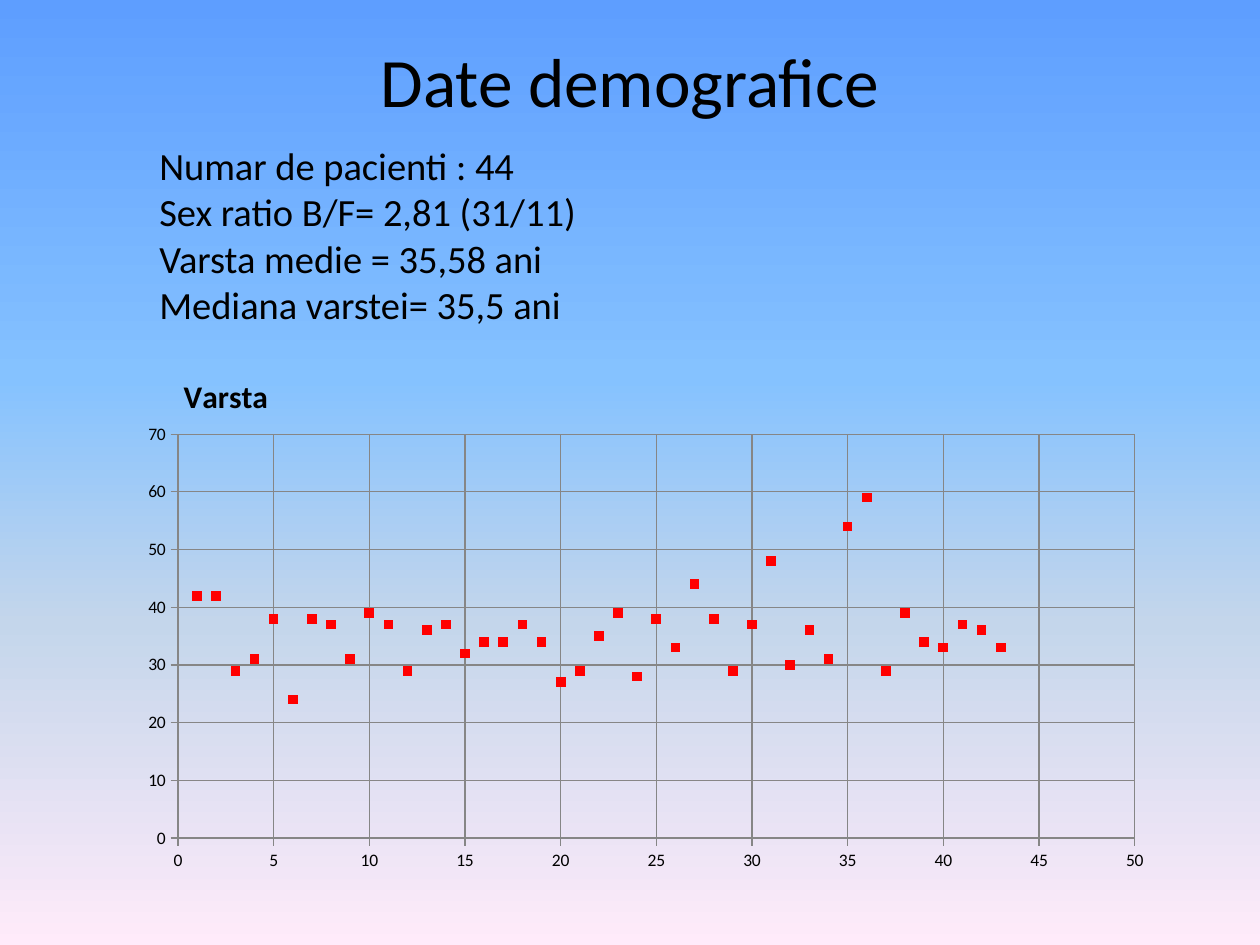
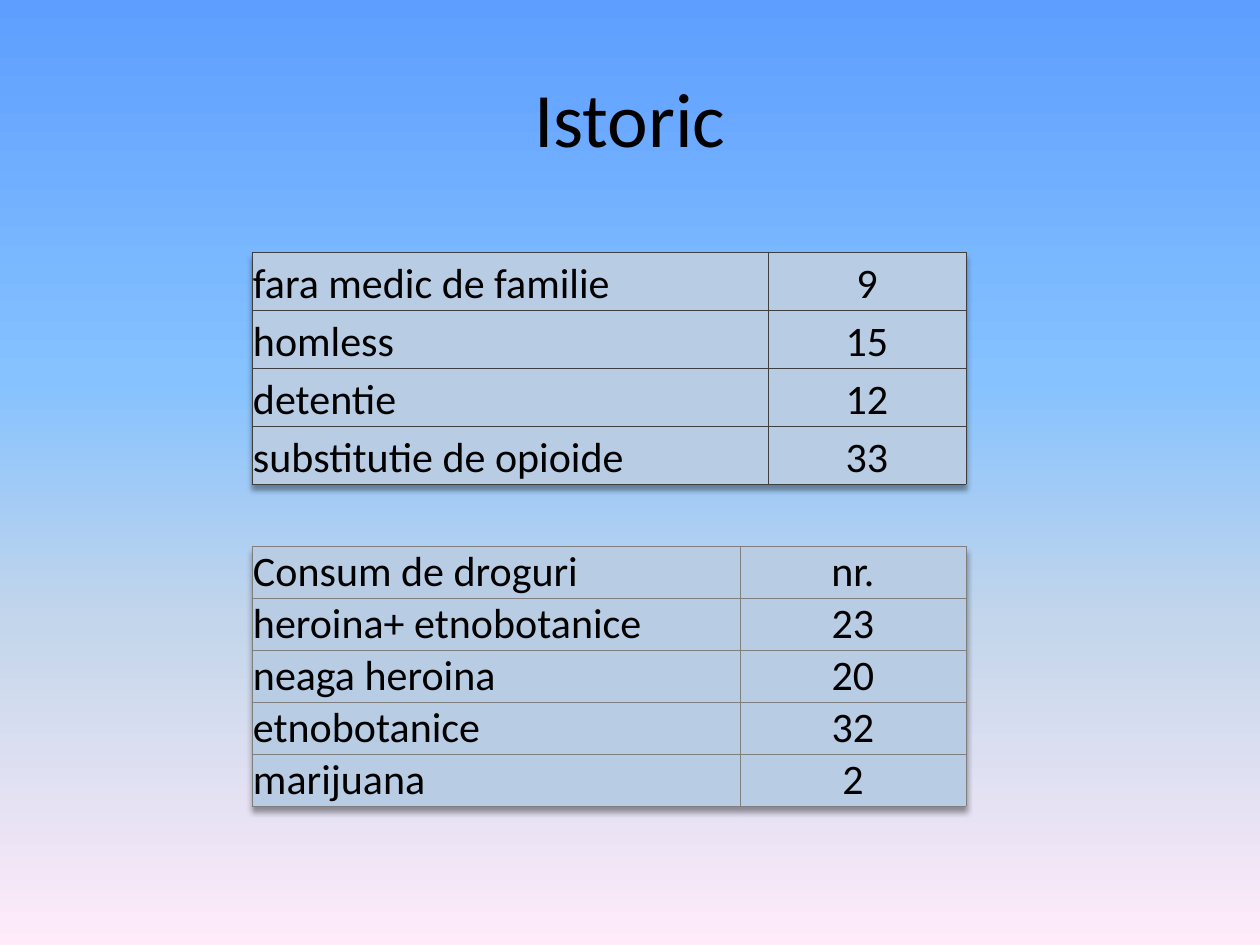
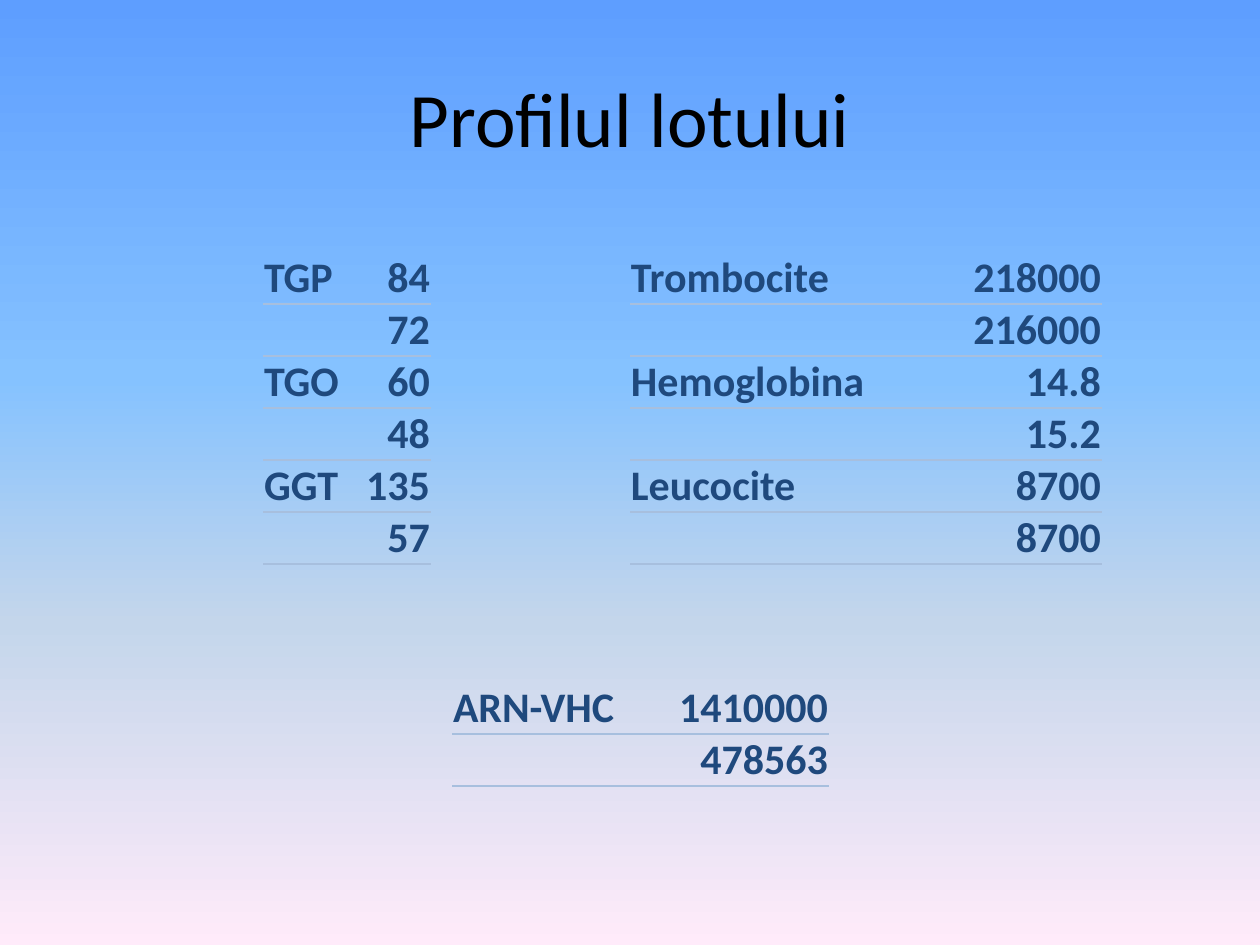
from lxml.etree import SubElement
from pptx import Presentation
from pptx.chart.data import XyChartData
from pptx.dml.color import RGBColor
from pptx.enum.chart import XL_CHART_TYPE, XL_MARKER_STYLE, XL_TICK_MARK
from pptx.enum.text import MSO_ANCHOR, PP_ALIGN
from pptx.oxml import parse_xml
from pptx.oxml.ns import nsdecls, qn
from pptx.util import Emu, Pt

FONT = "Calibri"
BLACK, RED, GRID, CELL_BLUE = "000000", "FF0000", "868686", "B8CCE4"
DARK_BLUE, LINE_BLUE = "1F497D", "A7BFDE"
BACKGROUND_STOPS = [(0, "5E9EFF"), (40, "85C2FF"), (66, "C4D6EB"), (100, "FFEBFA")]
NO_TABLE_STYLE = "{2D5ABB26-0587-4C30-8999-92F81FD0307C}"

DEMOGRAPHICS = [
    "Numar de pacienti : 44",
    "Sex ratio B/F= 2,81 (31/11)",
    "Varsta medie = 35,58 ani",
    "Mediana varstei= 35,5 ani",
]
AGES = [
    42, 42, 29, 31, 38, 24, 38, 37, 31, 39, 37, 29, 36, 37, 32, 34, 34, 37, 34, 27, 29, 35,
    39, 28, 38, 33, 44, 38, 29, 37, 48, 30, 36, 31, 54, 59, 29, 39, 34, 33, 37, 36, 33,
]

BOXED = {"color": BLACK, "bold": False, "align": PP_ALIGN.CENTER, "fill": CELL_BLUE,
         "sides": "LRTB", "line_width": 0.5, "shadow": True}
RULED = {"color": DARK_BLUE, "bold": True, "align": PP_ALIGN.RIGHT, "fill": None,
         "sides": "B", "line_width": 1.5, "line_color": LINE_BLUE, "shadow": False}

HISTORY_TABLES = [
    {"left": 252, "top": 252, "columns": (516, 198), "row_height": 58,
     "style": BOXED | {"line_color": "3F3F3F"},
     "rows": [("fara medic de familie", "9"), ("homless", "15"), ("detentie", "12"),
              ("substitutie de opioide", "33")]},
    {"left": 252, "top": 546, "columns": (488, 226), "row_height": 52,
     "style": BOXED | {"line_color": "7F7F7F"},
     "rows": [("Consum de droguri", "nr."), ("heroina+ etnobotanice", "23"),
              ("neaga heroina", "20"), ("etnobotanice", "32"), ("marijuana", "2")]},
]
PROFILE_TABLES = [
    {"left": 263, "top": 252, "columns": (84, 84), "row_height": 52, "style": RULED,
     "rows": [("TGP", "84"), ("", "72"), ("TGO", "60"), ("", "48"), ("GGT", "135"), ("", "57")]},
    {"left": 630, "top": 252, "columns": (236, 236), "row_height": 52, "style": RULED,
     "rows": [("Trombocite", "218000"), ("", "216000"), ("Hemoglobina", "14.8"),
              ("", "15.2"), ("Leucocite", "8700"), ("", "8700")]},
    {"left": 452, "top": 630, "columns": (181, 196), "row_height": 52, "style": RULED,
     "rows": [("", ""), ("ARN-VHC", "1410000"), ("", "478563")]},
]


def px(length):
    return Emu(round(length * 914400 / 126))


def rgb(color):
    return RGBColor.from_string(color)


def set_font(font, size, color=BLACK, bold=False):
    font.name, font.size, font.bold = FONT, Pt(size), bold
    font.color.rgb = rgb(color)


def paint_background(master):
    fill = master.background.fill
    fill.gradient()
    fill.gradient_angle = 270
    stops = master.element.find(".//" + qn("a:gsLst"))
    stops.clear()
    for position, color in BACKGROUND_STOPS:
        stop = SubElement(stops, qn("a:gs"), pos=str(position * 1000))
        SubElement(stop, qn("a:srgbClr"), val=color)


def add_text(slide, box, lines, size, align=PP_ALIGN.LEFT, wrap=True):
    frame = slide.shapes.add_textbox(*map(px, box)).text_frame
    frame.word_wrap = wrap
    frame.text = "\n".join(lines)
    for paragraph in frame.paragraphs:
        paragraph.alignment = align
        set_font(paragraph.font, size)
    return frame


def add_titled_slide(presentation, title, size=44, raise_by=0):
    """Add a blank slide whose title sits raise_by px above the middle of its box."""
    slide = presentation.slides.add_slide(presentation.slide_layouts[6])
    frame = add_text(slide, (63, 38, 1134, 158), [title], size, PP_ALIGN.CENTER)
    frame.vertical_anchor = MSO_ANCHOR.MIDDLE
    frame.margin_bottom = px(6 + 2 * raise_by)
    return slide


def set_layout(parent, **fractions):
    """Place a chart part by fractions of the chart area."""
    layout = parent.find(qn("c:layout"))
    if layout is None:
        layout = parse_xml(f"<c:layout {nsdecls('c')}/>")
        before = parent.find(qn("c:tx"))
        parent.insert(0 if before is None else parent.index(before) + 1, layout)
    manual = SubElement(layout, qn("c:manualLayout"))
    if "w" in fractions:
        SubElement(manual, qn("c:layoutTarget"), val="inner")
    for mode in ("xMode", "yMode"):
        SubElement(manual, qn(f"c:{mode}"), val="edge")
    for name, fraction in fractions.items():
        SubElement(manual, qn(f"c:{name}"), val=str(fraction))


def style_axis(axis, maximum, step):
    axis.minimum_scale, axis.maximum_scale, axis.major_unit = 0, maximum, step
    axis.has_major_gridlines = True
    axis.major_tick_mark, axis.minor_tick_mark = XL_TICK_MARK.OUTSIDE, XL_TICK_MARK.NONE
    for line in (axis.format.line, axis.major_gridlines.format.line):
        line.color.rgb = rgb(GRID)
        line.width = Pt(0.75)
    set_font(axis.tick_labels.font, 10)


def add_age_chart(slide):
    data = XyChartData()
    ages = data.add_series("Varsta")
    for patient, age in enumerate(AGES, start=1):
        ages.add_data_point(patient, age)
    chart = slide.shapes.add_chart(
        XL_CHART_TYPE.XY_SCATTER, px(126), px(336), px(1040), px(546), data).chart
    set_font(chart.font, 10)
    chart.has_legend = False
    chart.has_title = True
    title = chart.chart_title
    title.text_frame.text = "Varsta"
    set_font(title.text_frame.paragraphs[0].font, 18, bold=True)
    set_layout(title._element, x=0.05, y=0.06)
    set_layout(chart.plots[0]._element.getparent(), x=0.05, y=0.18, w=0.92, h=0.74)
    style_axis(chart.category_axis, 50, 5)
    style_axis(chart.value_axis, 70, 10)

    plot = chart.plots[0]
    plot.vary_by_categories = False
    series = plot.series[0]
    series.format.line.fill.background()
    marker = series.marker
    marker.style, marker.size = XL_MARKER_STYLE.SQUARE, 5
    marker.format.fill.solid()
    marker.format.fill.fore_color.rgb = rgb(RED)
    marker.format.line.color.rgb = rgb(RED)


def set_borders(cell, sides, color, width):
    properties = cell._tc.get_or_add_tcPr()
    for index, side in enumerate(sides):
        properties.insert(index, parse_xml(
            f'<a:ln{side} {nsdecls("a")} w="{Pt(width)}"><a:solidFill>'
            f'<a:srgbClr val="{color}"/></a:solidFill></a:ln{side}>'))


def fill_cell(cell, text, align, style):
    cell.text = text
    cell.vertical_anchor = MSO_ANCHOR.BOTTOM
    cell.margin_left = cell.margin_right = cell.margin_top = px(1)
    cell.margin_bottom = 0
    paragraph = cell.text_frame.paragraphs[0]
    paragraph.alignment = align
    set_font(paragraph.font, 24, style["color"], style["bold"])
    if style["fill"]:
        cell.fill.solid()
        cell.fill.fore_color.rgb = rgb(style["fill"])
    else:
        cell.fill.background()


def add_table(slide, left, top, columns, row_height, style, rows):
    table = slide.shapes.add_table(
        len(rows), len(columns), px(left), px(top),
        px(sum(columns)), px(row_height * len(rows))).table
    table.first_row = table.horz_banding = False
    properties = table._tbl.tblPr
    properties.find(qn("a:tableStyleId")).text = NO_TABLE_STYLE
    if style["shadow"]:
        properties.insert(0, parse_xml(
            f'<a:effectLst {nsdecls("a")}><a:outerShdw blurRad="40000" dist="40000" '
            'dir="5400000" rotWithShape="0"><a:srgbClr val="000000">'
            '<a:alpha val="38000"/></a:srgbClr></a:outerShdw></a:effectLst>'))
    for column, width in zip(table.columns, columns):
        column.width = px(width)
    for row, texts in zip(table.rows, rows):
        row.height = px(row_height)
        for cell, text, align in zip(row.cells, texts, (PP_ALIGN.LEFT, style["align"])):
            fill_cell(cell, text, align, style)
            if any(texts):
                set_borders(cell, style["sides"], style["line_color"], style["line_width"])


def main():
    presentation = Presentation()
    presentation.slide_width, presentation.slide_height = px(1260), px(945)
    paint_background(presentation.slide_master)

    slide = add_titled_slide(presentation, "Date demografice", size=39.6, raise_by=37)
    add_age_chart(slide)
    add_text(slide, (147, 136, 447, 199), DEMOGRAPHICS, 22, wrap=False)

    for title, tables in (("Istoric", HISTORY_TABLES), ("Profilul lotului", PROFILE_TABLES)):
        slide = add_titled_slide(presentation, title)
        for table in tables:
            add_table(slide, **table)

    presentation.save("out.pptx")


if __name__ == "__main__":
    main()
